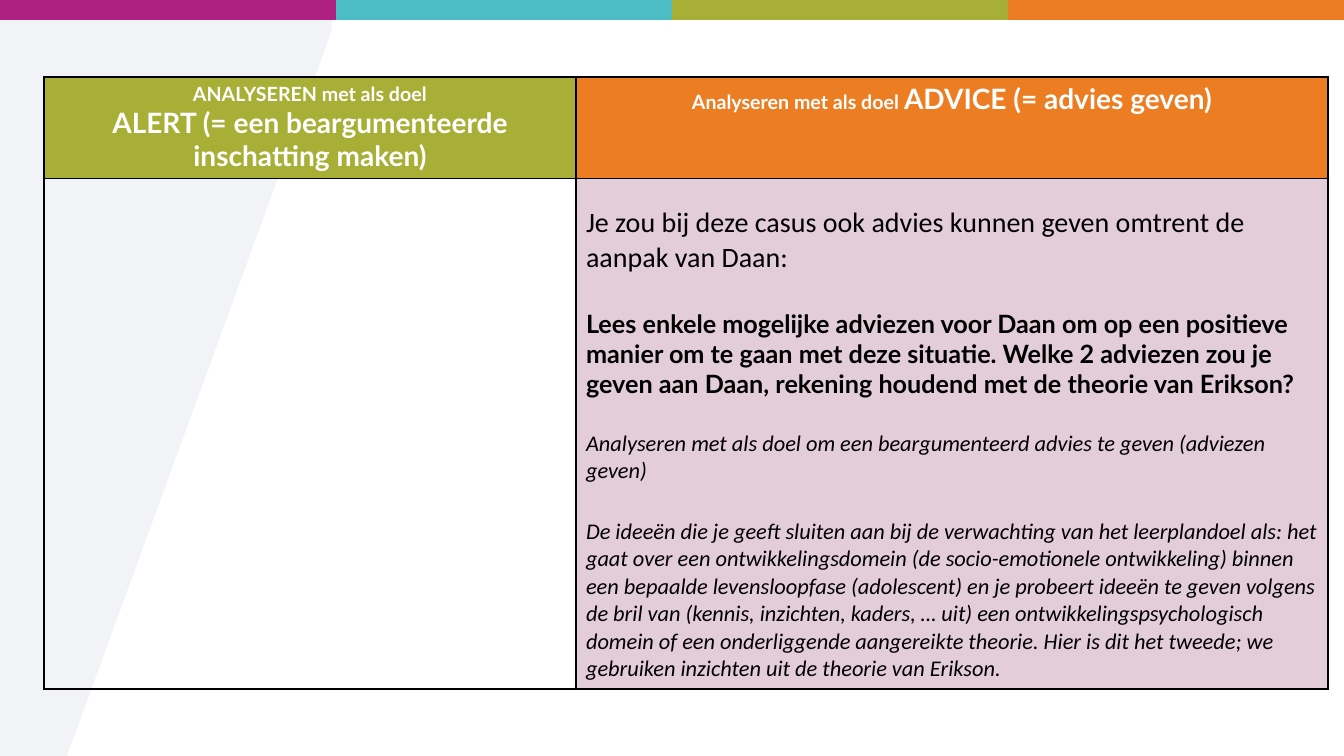
from typing import NamedTuple

from lxml import etree
from pptx import Presentation
from pptx.dml.color import RGBColor
from pptx.enum.shapes import MSO_SHAPE
from pptx.enum.text import PP_ALIGN
from pptx.oxml.ns import qn
from pptx.util import Pt

PX = 914400 / 100.8
SLIDE_W, SLIDE_H = 1344, 756
COLORS = {
    "magenta": "AE2081",
    "teal": "4CBCC5",
    "green": "A8AF37",
    "orange": "EC7D23",
    "pink": "E3CDD8",
    "mist": "E8ECF0",
    "white": "FFFFFF",
    "black": "000000",
}


class Run(NamedTuple):
    text: str
    size: int


class Para(NamedTuple):
    runs: list[Run]
    font: str = "Lato"
    color: str = "black"
    bold: bool = False
    italic: bool = False
    align: PP_ALIGN = PP_ALIGN.LEFT
    before: int = 0


class Cell(NamedTuple):
    paras: list[Para]
    fill: str | None = None
    margin_top: int = 5


def px(n: int) -> int:
    return round(n * PX)


def rgb(name: str) -> RGBColor:
    return RGBColor.from_string(COLORS[name])


def heading(*runs: Run) -> Para:
    return Para(list(runs), color="white", bold=True, align=PP_ALIGN.CENTER)


def paint(sp, color: str) -> None:
    sp.shadow.inherit = False
    sp.fill.solid()
    sp.fill.fore_color.rgb = rgb(color)
    sp.line.fill.background()


def add_slanted_panel(s) -> None:
    outline = [(311, 5), (325, 10), (332, 20), (331, 33), (67, 756), (0, 756)]
    builder = s.shapes.build_freeform(0, 5, scale=PX)
    builder.add_line_segments(outline, close=True)
    sp = builder.convert_to_shape()
    paint(sp, "mist")
    clr = sp.fill._xPr.find(".//" + qn("a:srgbClr"))
    etree.SubElement(clr, qn("a:alpha"), val="59000")


def add_top_bar(s) -> None:
    bands = ["magenta", "teal", "green", "orange"]
    width = SLIDE_W // len(bands)
    for i, color in enumerate(bands):
        sp = s.shapes.add_shape(
            MSO_SHAPE.RECTANGLE, px(i * width), 0, px(width), px(20))
        paint(sp, color)


def set_borders(cell) -> None:
    """Draw a 1 pt black line on all four sides, ahead of the cell fill."""
    tc_pr = cell._tc.get_or_add_tcPr()
    for i, side in enumerate(("lnL", "lnR", "lnT", "lnB")):
        ln = etree.Element(qn(f"a:{side}"), w=str(Pt(1)))
        fill = etree.SubElement(ln, qn("a:solidFill"))
        etree.SubElement(fill, qn("a:srgbClr"), val=COLORS["black"])
        tc_pr.insert(i, ln)


def write_para(p, para: Para) -> None:
    p.alignment = para.align
    if para.before:
        p.space_before = Pt(para.before)
    f = p.font
    f.name, f.bold, f.italic = para.font, para.bold, para.italic
    f.color.rgb = rgb(para.color)
    for run in para.runs:
        r = p.add_run()
        r.text = run.text
        r.font.size = Pt(run.size)


def fill_cell(cell, content: Cell) -> None:
    if content.fill:
        cell.fill.solid()
        cell.fill.fore_color.rgb = rgb(content.fill)
    else:
        cell.fill.background()
    set_borders(cell)
    cell.margin_top = px(content.margin_top)
    tf = cell.text_frame
    for i, para in enumerate(content.paras):
        write_para(tf.add_paragraph() if i else tf.paragraphs[0], para)


def add_analysis_table(s, rows: list[list[Cell]]) -> None:
    widths, heights = [532, 752], [101, 511]
    table = s.shapes.add_table(
        len(heights), len(widths), px(44), px(77),
        px(sum(widths)), px(sum(heights))).table
    table.first_row = table.horz_banding = False
    for col, width in zip(table.columns, widths):
        col.width = px(width)
    for row, height, contents in zip(table.rows, heights, rows):
        row.height = px(height)
        for cell, content in zip(row.cells, contents):
            fill_cell(cell, content)


ADVICE = [
    Para([Run("Je zou bij deze casus ook advies kunnen geven omtrent de "
              "aanpak van Daan:", 20)], font="Calibri"),
    Para([Run("Lees enkele mogelijke adviezen voor Daan om op een positieve "
              "manier om te gaan met deze situatie. Welke 2 adviezen zou je "
              "geven aan Daan, rekening houdend met de theorie van Erikson?",
              18)], bold=True, before=24),
    Para([Run("Analyseren met als doel om een beargumenteerd advies te geven "
              "(adviezen geven)", 16)],
         font="Calibri", italic=True, before=22),
    Para([Run("De ideeën die je geeft sluiten aan bij de verwachting van het "
              "leerplandoel als: het gaat over een ontwikkelingsdomein (de "
              "socio-emotionele ontwikkeling) binnen een bepaalde "
              "levensloopfase (adolescent) en je probeert ideeën te geven "
              "volgens de bril van (kennis, inzichten, kaders, … uit) een "
              "ontwikkelingspsychologisch domein of een onderliggende "
              "aangereikte theorie. Hier is dit het tweede; we gebruiken "
              "inzichten uit de theorie van Erikson.", 16)],
         font="Calibri", italic=True, before=24),
]
ROWS = [
    [
        Cell([heading(Run("ANALYSEREN met als doel", 14)),
              heading(Run("ALERT (= een beargumenteerde inschatting maken)",
                          20))], "green"),
        Cell([heading(Run("Analyseren met als doel ", 14),
                      Run("ADVICE (= advies geven)", 20))], "orange"),
    ],
    [Cell([]), Cell(ADVICE, "pink", margin_top=28)],
]


def main() -> None:
    prs = Presentation()
    prs.slide_width, prs.slide_height = px(SLIDE_W), px(SLIDE_H)
    s = prs.slides.add_slide(prs.slide_layouts[6])
    s.background.fill.solid()
    s.background.fill.fore_color.rgb = rgb("white")
    add_slanted_panel(s)
    add_top_bar(s)
    add_analysis_table(s, ROWS)
    prs.save("out.pptx")


if __name__ == "__main__":
    main()
